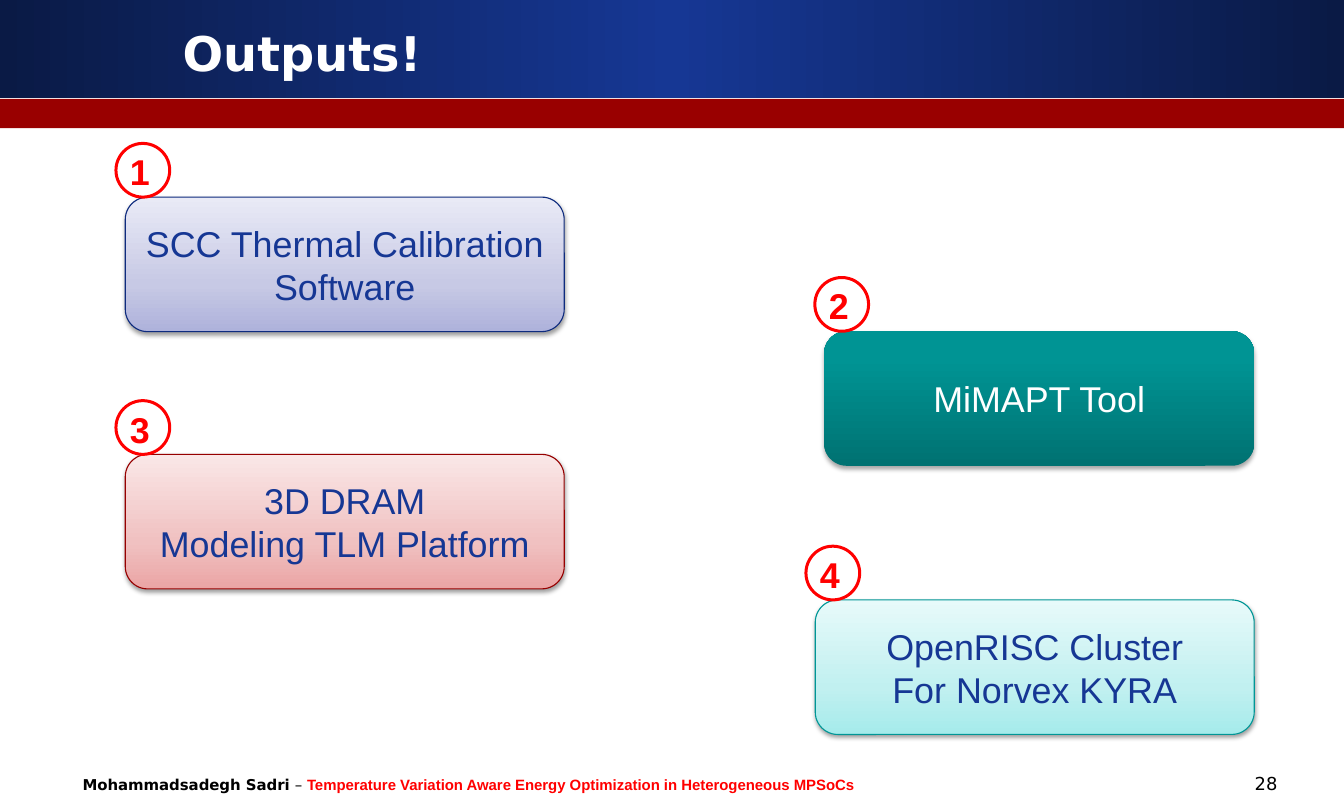
from dataclasses import dataclass

from lxml.etree import SubElement
from pptx import Presentation
from pptx.dml.color import RGBColor
from pptx.enum.shapes import MSO_SHAPE as Preset
from pptx.enum.text import MSO_ANCHOR as Anchor, MSO_AUTO_SIZE as AutoSize, PP_ALIGN as Align
from pptx.oxml.ns import qn
from pptx.util import Cm, Pt


@dataclass(frozen=True)
class Theme:
    head_font: str = "DejaVu Sans"
    body_font: str = "Arial"
    navy: str = "163794"
    white: str = "FFFFFF"
    black: str = "000000"
    red: str = "FF0000"
    stripe: str = "990000"
    banner: tuple = ((0, "0A1A45"), (50, "163794"), (100, "0A1A45"))
    title_size: int = 32
    card_size: int = 24
    page_size: int = 12
    footer_size: int = 10


@dataclass(frozen=True)
class CardStyle:
    stops: tuple
    text: str = Theme.navy
    line: str = ""
    shadow_alpha: int = 38
    shadow_distance: float = 1.6


THEME = Theme()
BLUE = CardStyle(((0, "AEB2DB"), (35, "C7C9E5"), (100, "E9EAF6")), line="0E2B7E")
TEAL = CardStyle(((0, "007272"), (80, "009494"), (100, "009595")), THEME.white,
                 shadow_alpha=35, shadow_distance=1.8)
ROSE = CardStyle(((0, "EBA5A5"), (35, "F0C1C1"), (100, "FAE7E7")), line="960000")
AQUA = CardStyle(((0, "A5EBEB"), (35, "C1F0F0"), (100, "E7FAFA")), line="009696")

# Left, top and width in cm, then wording and style
CARD_HEIGHT = 3.18
CARDS = [
    (2.96, 4.66, 10.37, "SCC Thermal Calibration Software", BLUE),
    (19.47, 7.83, 10.16, "MiMAPT Tool", TEAL),
    (2.96, 10.74, 10.37, "3D DRAM\nModeling TLM Platform", ROSE),
    (19.26, 14.18, 10.37, "OpenRISC Cluster\nFor Norvex KYRA", AQUA),
]


def color(value):
    return RGBColor.from_string(value)


def format_run(span, size, font, ink, bold=False):
    span.font.size = Pt(size)
    span.font.name = font
    span.font.color.rgb = color(ink)
    span.font.bold = bold


def format_frame(frame, align, *style):
    for para in frame.paragraphs:
        para.alignment = align
        for span in para.runs:
            format_run(span, *style)


def fill_gradient(shape, stops, angle):
    shape.fill.gradient()
    shape.fill.gradient_angle = angle
    stop_list = shape.element.spPr.find(f".//{qn('a:gsLst')}")
    stop_list.clear()
    for position, value in stops:
        stop = SubElement(stop_list, qn("a:gs"), pos=str(position * 1000))
        SubElement(stop, qn("a:srgbClr"), val=value)


def add_shadow(shape, alpha, distance):
    effects = shape.element.spPr.find(qn("a:effectLst"))
    shadow = SubElement(effects, qn("a:outerShdw"), blurRad=str(Pt(3.1)),
                        dist=str(Pt(distance)), dir="5400000", rotWithShape="0")
    ink = SubElement(shadow, qn("a:srgbClr"), val=THEME.black)
    SubElement(ink, qn("a:alpha"), val=str(alpha * 1000))


def add_plain_shape(page, preset, left, top, width, height):
    shape = page.shapes.add_shape(preset, Cm(left), Cm(top), Cm(width), Cm(height))
    shape.shadow.inherit = False
    shape.line.fill.background()
    return shape


def add_label(page, left, top, width, height, text="", wrap=True):
    box = page.shapes.add_textbox(Cm(left), Cm(top), Cm(width), Cm(height))
    box.text_frame.word_wrap = wrap
    box.text_frame.text = text
    return box


def add_header(page, left, top, width):
    # Banner and stripe
    banner = add_plain_shape(page, Preset.RECTANGLE, left, top, width, 2.31)
    fill_gradient(banner, THEME.banner, 0)
    stripe = add_plain_shape(page, Preset.RECTANGLE, left, top + 2.34, width, 0.69)
    stripe.fill.solid()
    stripe.fill.fore_color.rgb = color(THEME.stripe)

    # Title, brought in front of the banner
    title = page.shapes.title
    title.left, title.top = Cm(left + 4.06), Cm(top + 0.46)
    title.width, title.height = Cm(23.57), Cm(1.57)
    frame = title.text_frame
    frame.text = "Outputs!"
    frame.auto_size = AutoSize.NONE
    frame.vertical_anchor = Anchor.MIDDLE
    format_frame(frame, Align.LEFT, THEME.title_size, THEME.head_font, THEME.white, True)
    page.shapes.element.append(title.element)


def add_footer(page, left, top):
    # Author and thesis name
    box = add_label(page, left, top, 25.9, 1.12)
    para = box.text_frame.paragraphs[0]
    for text, font, ink, bold in (
        ("Mohammadsadegh Sadri ", THEME.head_font, THEME.black, True),
        ("– ", THEME.head_font, THEME.black, False),
        ("Temperature Variation Aware Energy Optimization in Heterogeneous MPSoCs",
         THEME.body_font, THEME.red, True),
    ):
        span = para.add_run()
        span.text = text
        format_run(span, THEME.footer_size, font, ink, bold)

    # Page number
    number = add_label(page, left + 25.43, top - 0.07, 3.3, 0.71, "28")
    format_frame(number.text_frame, Align.RIGHT, THEME.page_size, THEME.head_font, THEME.black)


def add_badge(page, left, top, size, number):
    label = add_label(page, left + 0.08, top + 0.03, 0.99, size, str(number), wrap=False)
    format_frame(label.text_frame, Align.LEFT, THEME.card_size, THEME.body_font, THEME.red, True)
    ring = add_plain_shape(page, Preset.OVAL, left, top, size, size)
    ring.fill.background()
    ring.line.color.rgb = color(THEME.red)
    ring.line.width = Pt(2)


def add_card(page, left, top, width, height, text, style, number):
    card = add_plain_shape(page, Preset.ROUNDED_RECTANGLE, left, top, width, height)
    fill_gradient(card, style.stops, 90)
    if style.line:
        card.line.color.rgb = color(style.line)
        card.line.width = Pt(0.75)
    add_shadow(card, style.shadow_alpha, style.shadow_distance)
    frame = card.text_frame
    frame.word_wrap = True
    frame.vertical_anchor = Anchor.MIDDLE
    frame.text = text
    format_frame(frame, Align.CENTER, THEME.card_size, THEME.body_font, style.text)

    # The badge rests on the top left corner
    badge_size = 1.27
    add_badge(page, left - 0.22, top - badge_size, badge_size, number)


def main():
    deck = Presentation()
    deck.slide_width, deck.slide_height = Cm(31.75), Cm(19.05)
    page = deck.slides.add_slide(deck.slide_layouts.get_by_name("Title Only"))
    add_header(page, 0, 0, 31.75)
    add_footer(page, 1.7, 18.21)
    for number, (left, top, width, text, style) in enumerate(CARDS, start=1):
        add_card(page, left, top, width, CARD_HEIGHT, text, style, number)
    deck.save("out.pptx")


if __name__ == "__main__":
    main()
